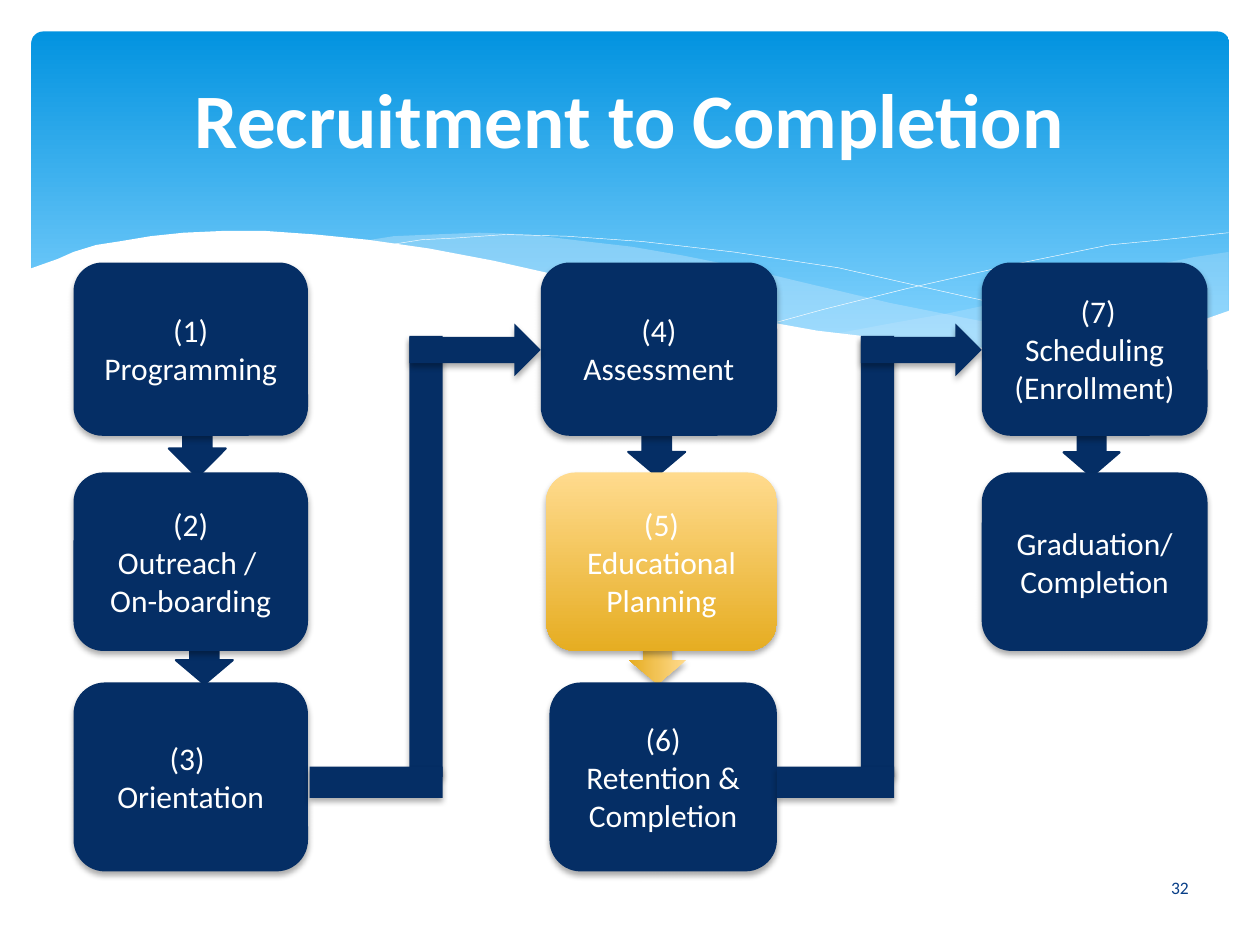
from pptx import Presentation
from pptx.dml.color import RGBColor
from pptx.enum.shapes import MSO_SHAPE
from pptx.enum.text import MSO_ANCHOR, PP_ALIGN
from pptx.oxml import parse_xml
from pptx.oxml.ns import nsdecls, qn
from pptx.util import Pt

NAVY = RGBColor(0x05, 0x2E, 0x65)
WHITE = RGBColor(0xFF, 0xFF, 0xFF)
PALE = RGBColor(0xC6, 0xE7, 0xFC)
BLUE = RGBColor(0x07, 0x3E, 0x87)
SKY = (RGBColor(0x02, 0x93, 0xE0), RGBColor(0x83, 0xD3, 0xFE), 0.9)
GOLD = (RGBColor(0xFF, 0xDB, 0x8E), RGBColor(0xE6, 0xAD, 0x22), 1)

deck = Presentation()
deck.slide_width, deck.slide_height = Pt(720), Pt(540)
slide = deck.slides.add_slide(deck.slide_layouts[5])
shapes = slide.shapes


def add_block(kind, left, top, width, height, paint, shade=True):
    block = shapes.add_shape(kind, Pt(left), Pt(top), Pt(width), Pt(height))
    block.shadow.inherit = False
    block.line.fill.background()
    if isinstance(paint, RGBColor):
        block.fill.solid()
        block.fill.fore_color.rgb = paint
    else:
        block.fill.gradient()
        block.fill.gradient_angle = 270
        first, last = block.fill.gradient_stops
        first.color.rgb, last.color.rgb = paint[:2]
        first.position, last.position = 0, paint[2]
    if shade:
        block._element.spPr.find(qn("a:effectLst")).append(parse_xml(
            f'<a:outerShdw {nsdecls("a")} blurRad="44450" dist="27940" dir="5400000" '
            'algn="ctr" rotWithShape="0"><a:srgbClr val="000000">'
            '<a:alpha val="32000"/></a:srgbClr></a:outerShdw>'))
    return block


def write(frame, lines, size, color, bold=False):
    frame.word_wrap = True
    frame.vertical_anchor = MSO_ANCHOR.MIDDLE
    for i, line in enumerate(lines):
        para = frame.add_paragraph() if i else frame.paragraphs[0]
        para.alignment = PP_ALIGN.CENTER
        run = para.add_run()
        run.text = line
        run.font.name = "Calibri"
        run.font.size = Pt(size)
        run.font.bold = bold
        run.font.color.rgb = color


banner = add_block(MSO_SHAPE.ROUNDED_RECTANGLE, 18, 18, 684.5, 194.5, SKY, False)
banner.adjustments[0] = 0.034

right = [(702, 144), (682, 147), (652, 153), (620, 161), (580, 171), (542, 179),
         (508, 185), (476, 191), (508, 195), (545, 198), (578, 200), (609, 199.5),
         (634, 197), (657, 193), (678, 188), (702.5, 178)]
middle = [(643, 197), (602, 191), (558, 183), (508, 173), (453, 160), (420, 152),
          (390, 146), (361, 141), (335, 137.5), (302, 134.5), (274, 133), (248, 133.5),
          (225, 135), (206, 137.5), (233, 141), (261, 146), (291, 152), (323, 160),
          (382, 173), (433, 184), (479, 192), (520, 197), (556, 199.5), (589, 200),
          (624, 199)]
falling = [(222, 140), (241, 137), (261, 136), (289, 134.5), (324, 135), (367, 138),
           (419, 144), (479, 153), (523, 163), (572, 174), (626, 188), (653, 196)]
rising = [(441, 185), (470, 177), (518, 165), (580, 151), (634, 140), (665, 137),
          (702, 133)]
front = [(703.5, 177), (684, 184), (655, 192), (621, 197), (583, 199.5), (548, 198.5),
         (510, 194.5), (467, 189), (417, 180), (362, 168), (322, 158), (282, 149),
         (245, 141.5), (210, 137), (180, 134), (152, 132.5), (127, 132.5), (105, 133),
         (86, 135), (68, 137.5), (55, 140.5), (42, 144.5), (33, 147.5), (16.5, 153.5),
         (16.5, 237), (703.5, 237)]

for points, color, alpha in [(right, PALE, 29), (middle, PALE, 40), (falling, None, 0),
                             (rising, None, 0), (front, WHITE, 100)]:
    pen = shapes.build_freeform(*points[0], scale=Pt(1))
    pen.add_line_segments(points[1:], close=color is not None)
    wave = pen.convert_to_shape()
    wave.shadow.inherit = False
    if color is None:
        wave.fill.background()
        wave.line.color.rgb = WHITE
        wave.line.width = Pt(0.25)
        continue
    wave.line.fill.background()
    wave.fill.solid()
    wave.fill.fore_color.rgb = color
    tint = wave._element.spPr.find(".//" + qn("a:srgbClr"))
    tint.append(parse_xml(f'<a:alpha {nsdecls("a")} val="{alpha * 1000}"/>'))

title = shapes.title
title.left, title.top, title.width, title.height = Pt(36), Pt(18), Pt(648), Pt(98.5)
write(title.text_frame, ["Recruitment to Completion"], 44, WHITE, True)
title._element.getparent().append(title._element)

for left, top, width, height, paint in [
        (96.5, 240, 32.5, 32.5, NAVY), (103, 361, 27.5, 32.5, NAVY),
        (361.5, 242, 27.5, 32.5, NAVY), (362, 361, 27.5, 32.5, GOLD),
        (610, 242.5, 27.5, 32, NAVY)]:
    arrow = add_block(MSO_SHAPE.RIGHT_ARROW, left, top, width, height, paint, paint == GOLD)
    arrow.rotation = 90
    if paint == NAVY:
        arrow.line.color.rgb = NAVY
        arrow.line.width = Pt(1.25)

rows = [(150, 99), (270, 102), (390, 108)]
for left, width, row, lines in [
        (42, 134, 0, ["(1)", "Programming"]),
        (42, 134, 1, ["(2)", "Outreach / ", "On-boarding"]),
        (42, 134, 2, ["(3) ", "Orientation"]),
        (309, 135, 0, ["(4)", "Assessment"]),
        (312, 132, 1, ["(5)", "Educational Planning"]),
        (314, 130, 2, ["(6)", "Retention &", "Completion"]),
        (561, 129, 0, [" (7)", "Scheduling", "(Enrollment)"]),
        (561, 129, 1, ["Graduation/ Completion"])]:
    paint = GOLD if lines[0] == "(5)" else NAVY
    box = add_block(MSO_SHAPE.ROUNDED_RECTANGLE, left, rows[row][0], width, rows[row][1], paint)
    write(box.text_frame, lines, 18, WHITE)

for start, bend, end in [(444, 492, 561), (177, 234, 309)]:
    add_block(MSO_SHAPE.RECTANGLE, bend, 192, 19, 252, NAVY)
    add_block(MSO_SHAPE.RECTANGLE, start, 438, bend + 19 - start, 18, NAVY)
    add_block(MSO_SHAPE.RIGHT_ARROW, bend, 185, end - bend, 30, NAVY)

number = shapes.add_textbox(Pt(628.5), Pt(492.5), Pt(91.5), Pt(29))
write(number.text_frame, ["32"], 10, BLUE)

deck.save("out.pptx")
